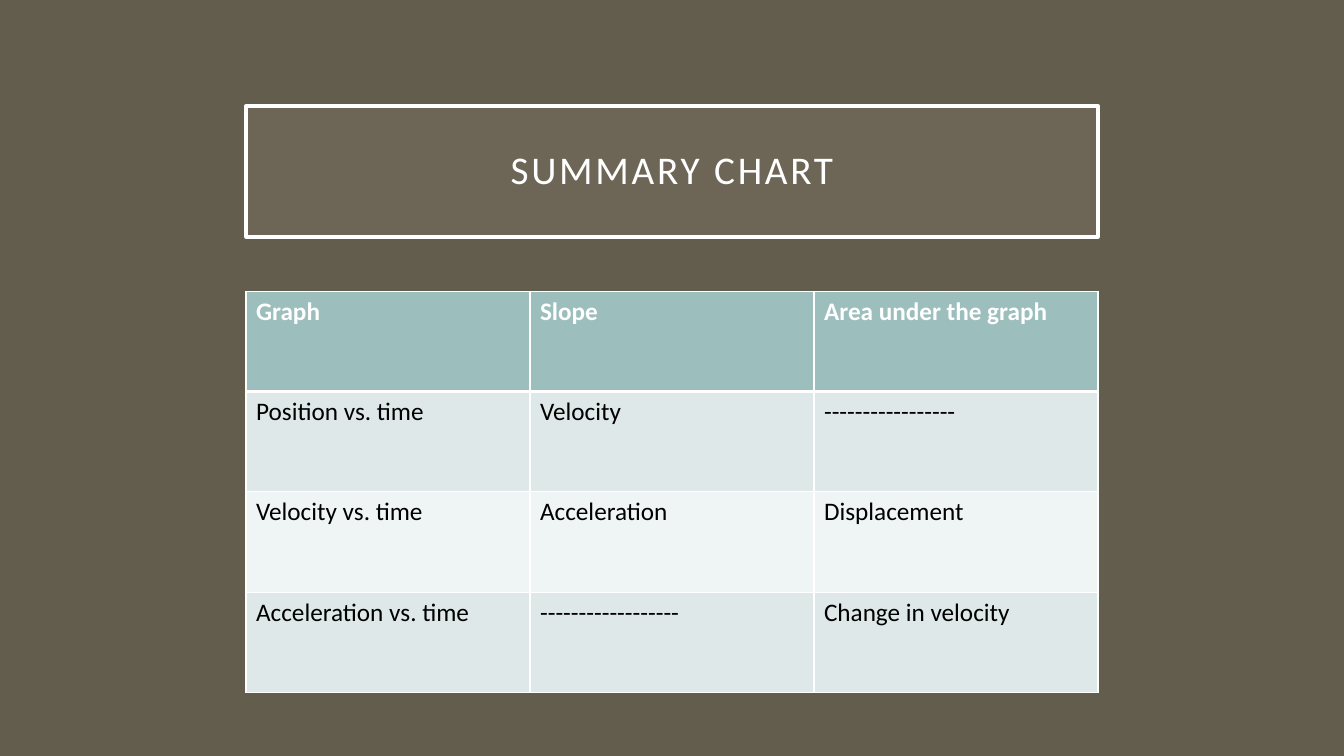
from lxml.etree import SubElement
from pptx import Presentation
from pptx.dml.color import RGBColor as Rgb
from pptx.enum.shapes import MSO_SHAPE as Shape
from pptx.enum.text import MSO_ANCHOR as Anchor, PP_ALIGN as Align
from pptx.oxml import parse_xml
from pptx.oxml.ns import nsdecls, qn
from pptx.util import Inches, Pt

COLORS = {
    "background": "635D4D",
    "title fill": "A7A08E",
    "header": "9CBEBD",
    "odd row": "DEE8E8",
    "even row": "EFF4F4",
    "light": "FFFFFF",
    "dark": "000000",
}

SUMMARY = [
    ["Graph", "Slope", "Area under the graph"],
    ["Position vs. time", "Velocity", "-----------------"],
    ["Velocity vs. time", "Acceleration", "Displacement"],
    ["Acceleration vs. time", "------------------", "Change in velocity"],
]


class SlideBuilder:
    font = "Calibri"

    def __init__(self, slide):
        self.slide = slide

    def color(self, name):
        return Rgb.from_string(COLORS[name])

    def paint(self, fill, name):
        fill.solid()
        fill.fore_color.rgb = self.color(name)

    def add_run(self, paragraph, text, size, color, bold=False):
        run = paragraph.add_run()
        run.text = text
        run.font.name = self.font
        run.font.size = Pt(size)
        run.font.bold = bold
        run.font.color.rgb = self.color(color)
        return run

    def background(self, name):
        self.paint(self.slide.background.fill, name)

    def title(self, text, left, top, width, height):
        banner = self.slide.shapes.add_shape(
            Shape.RECTANGLE, Inches(left), Inches(top), Inches(width), Inches(height))
        banner.shadow.inherit = False
        self.paint(banner.fill, "title fill")
        tint = next(banner.fill._xPr.iter(qn("a:srgbClr")))
        SubElement(tint, qn("a:alpha"), val="15000")
        banner.line.color.rgb = self.color("light")
        banner.line.width = Pt(2.5)

        frame = banner.text_frame
        frame.word_wrap = True
        frame.vertical_anchor = Anchor.MIDDLE
        frame.margin_left = frame.margin_right = Inches(0.2)
        frame.margin_top = frame.margin_bottom = Inches(0.2)
        heading = frame.paragraphs[0]
        heading.alignment = Align.CENTER
        heading.line_spacing = 0.9
        run = self.add_run(heading, text, 28, "light")
        run.font._element.set("spc", "200")

    def borders(self, cell, top, bottom):
        widths = {"L": 1, "R": 1, "T": top, "B": bottom}
        properties = cell._tc.get_or_add_tcPr()
        for position, (side, width) in enumerate(widths.items()):
            properties.insert(position, parse_xml(
                f'<a:ln{side} {nsdecls("a")} w="{Pt(width)}"><a:solidFill>'
                f'<a:srgbClr val="{COLORS["light"]}"/></a:solidFill></a:ln{side}>'))

    def table(self, rows, left, top, width, height):
        grid = self.slide.shapes.add_table(
            len(rows), len(rows[0]),
            Inches(left), Inches(top), Inches(width), Inches(height)).table
        for r, row in enumerate(rows):
            is_header = r == 0
            band = "header" if is_header else "odd row" if r % 2 else "even row"
            for c, text in enumerate(row):
                cell = grid.cell(r, c)
                self.paint(cell.fill, band)
                # A heavy rule divides the header from the body
                self.borders(cell, top=3 if r == 1 else 1, bottom=3 if is_header else 1)
                self.add_run(cell.text_frame.paragraphs[0], text, 18,
                             "light" if is_header else "dark", bold=is_header)


def main():
    deck = Presentation()
    deck.slide_width, deck.slide_height = Inches(13.33), Inches(7.5)
    builder = SlideBuilder(deck.slides.add_slide(deck.slide_layouts[6]))

    # Backdrop and title
    builder.background("background")
    builder.title("SUMMARY CHART", 2.44, 1.05, 8.45, 1.3)

    # Summary of graph meanings
    builder.table(SUMMARY, 2.44, 2.89, 8.45, 3.98)

    deck.save("out.pptx")


if __name__ == "__main__":
    main()
